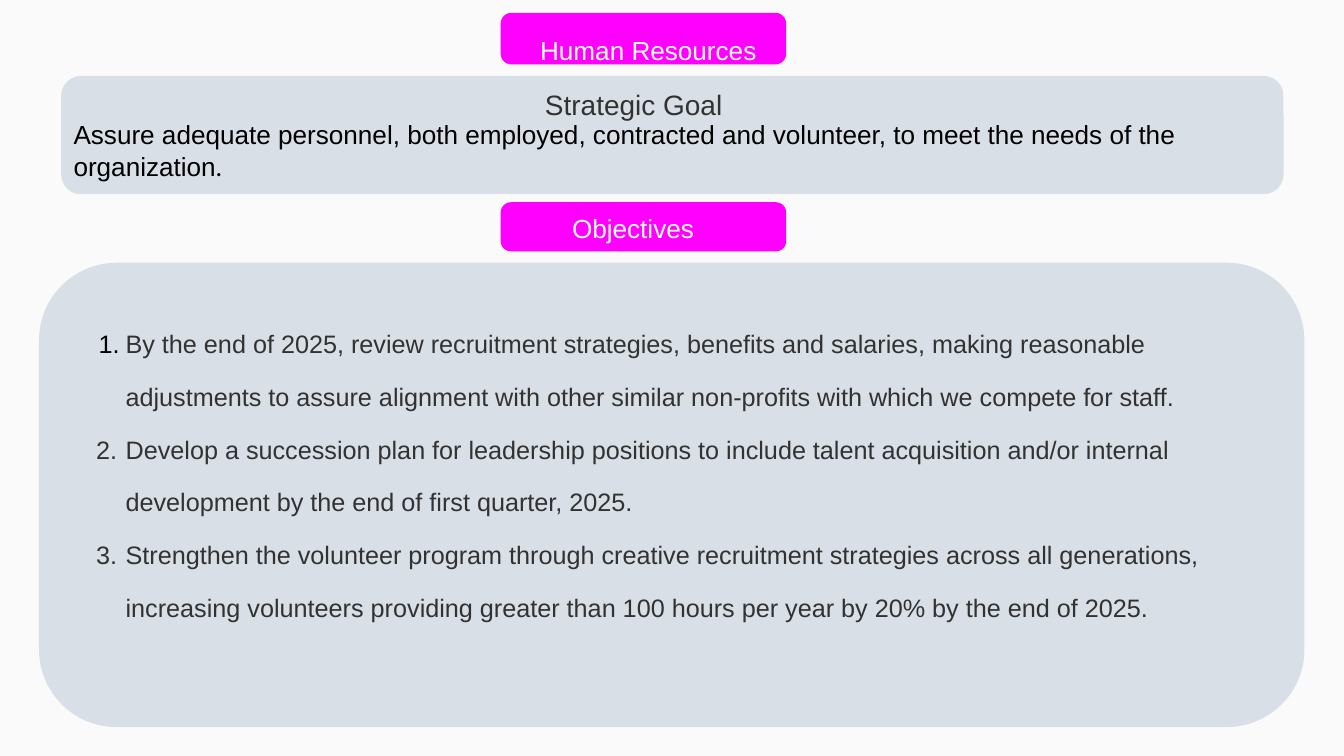
from lxml import etree
from pptx import Presentation
from pptx import util as u
from pptx.dml.color import RGBColor
from pptx.enum import shapes, text
from pptx.oxml import ns

BACKGROUND = RGBColor(0xFA, 0xFA, 0xFA)
PANEL = RGBColor(0xD9, 0xDF, 0xE6)
ACCENT = RGBColor(0xFF, 0x00, 0xFF)
WHITE = RGBColor(0xFF, 0xFF, 0xFF)
BLACK = RGBColor(0x00, 0x00, 0x00)
DARK = RGBColor(0x32, 0x32, 0x32)

GOAL = ("Assure adequate personnel, both employed, contracted and volunteer, "
        "to meet the needs of the organization")
OBJECTIVES = [
    ("By the end of 2025, review recruitment strategies, benefits and salaries, making "
     "reasonable adjustments to assure alignment with other similar non-profits with "
     "which we compete for staff.", 28.8, BLACK),
    ("Develop a succession plan for leadership positions to include talent acquisition "
     "and/or internal development by the end of first quarter, 2025.", 31.7, DARK),
    ("Strengthen the volunteer program through creative recruitment strategies across all "
     "generations, increasing volunteers providing greater than 100 hours per year by 20% "
     "by the end of 2025.", 31.7, DARK),
]


def set_values(target, values):
    for name, value in values.items():
        setattr(target, name, value)


def add_panel(slide, box, color, corner):
    shape = slide.shapes.add_shape(shapes.MSO_SHAPE.ROUNDED_RECTANGLE, *map(u.Pt, box))
    shape.adjustments[0] = corner
    shape.shadow.inherit = False
    shape.fill.solid()
    shape.fill.fore_color.rgb = color
    shape.line.fill.background()
    return shape


def add_run(paragraph, words, size, color, font="Arial"):
    run = paragraph.add_run()
    run.text = words
    set_values(run.font, {"size": u.Pt(size), "name": font})
    run.font.color.rgb = color


def add_text_frame(slide, box):
    frame = slide.shapes.add_textbox(*map(u.Pt, box)).text_frame
    set_values(frame, {"word_wrap": True, "margin_left": 0, "margin_top": 0,
                       "margin_right": 0, "margin_bottom": 0})
    return frame


def add_label(slide, box, words, size, color, spacing, alignment):
    paragraph = add_text_frame(slide, box).paragraphs[0]
    set_values(paragraph, {"line_spacing": spacing, "alignment": alignment})
    add_run(paragraph, words, size, color)


def add_goal(slide, box):
    shape = add_panel(slide, box, PANEL, 0.167)
    frame = shape.text_frame
    set_values(frame, {"word_wrap": True, "vertical_anchor": text.MSO_ANCHOR.MIDDLE,
                       "margin_left": u.Pt(7.2), "margin_right": u.Pt(7.2),
                       "margin_top": u.Pt(36), "margin_bottom": u.Pt(3.6)})
    paragraph = frame.paragraphs[0]
    paragraph.alignment = text.PP_ALIGN.LEFT
    add_run(paragraph, GOAL, 28, BLACK)
    add_run(paragraph, ".", 28, BLACK, "Calibri")


def number_paragraph(paragraph, hanging, color):
    properties = paragraph._p.get_or_add_pPr()
    properties.set("marL", str(u.Pt(36)))
    properties.set("indent", str(-u.Pt(hanging)))
    number_color = etree.SubElement(properties, ns.qn("a:buClr"))
    etree.SubElement(number_color, ns.qn("a:srgbClr"), val=str(color))
    etree.SubElement(properties, ns.qn("a:buAutoNum"), type="arabicPeriod")


def add_objectives(slide, box):
    frame = add_text_frame(slide, box)
    for index, (words, hanging, number_color) in enumerate(OBJECTIVES):
        paragraph = frame.add_paragraph() if index else frame.paragraphs[0]
        paragraph.line_spacing = 1.74
        number_paragraph(paragraph, hanging, number_color)
        add_run(paragraph, words, 27, DARK)


def main():
    """Build the Human Resources goal and objectives slide."""
    presentation = Presentation()
    set_values(presentation, {"slide_width": u.Pt(1440), "slide_height": u.Pt(810)})
    slide = presentation.slides.add_slide(presentation.slide_layouts[6])
    slide.background.fill.solid()
    slide.background.fill.fore_color.rgb = BACKGROUND

    center, left = text.PP_ALIGN.CENTER, text.PP_ALIGN.LEFT
    add_goal(slide, (65.5, 81.4, 1309.7, 126.7))
    add_panel(slide, (536.4, 13.7, 306, 55.4), ACCENT, 0.21)
    add_label(slide, (542.2, 23.8, 304.6, 33.8), "Human Resources", 28, WHITE, 1.4, center)
    add_panel(slide, (41.8, 281.5, 1355.8, 497.5), PANEL, 0.167)
    add_panel(slide, (536.4, 216.7, 306, 52.6), ACCENT, 0.21)
    add_label(slide, (552.2, 214.6, 252, 38.2), "Objectives", 28, WHITE, 1.4, center)
    add_label(slide, (583.9, 77.8, 274.3, 36), "Strategic Goal", 30, DARK, 1.45, left)
    add_objectives(slide, (98.6, 328.3, 1242.7, 388.8))
    presentation.save("out.pptx")


if __name__ == "__main__":
    main()
